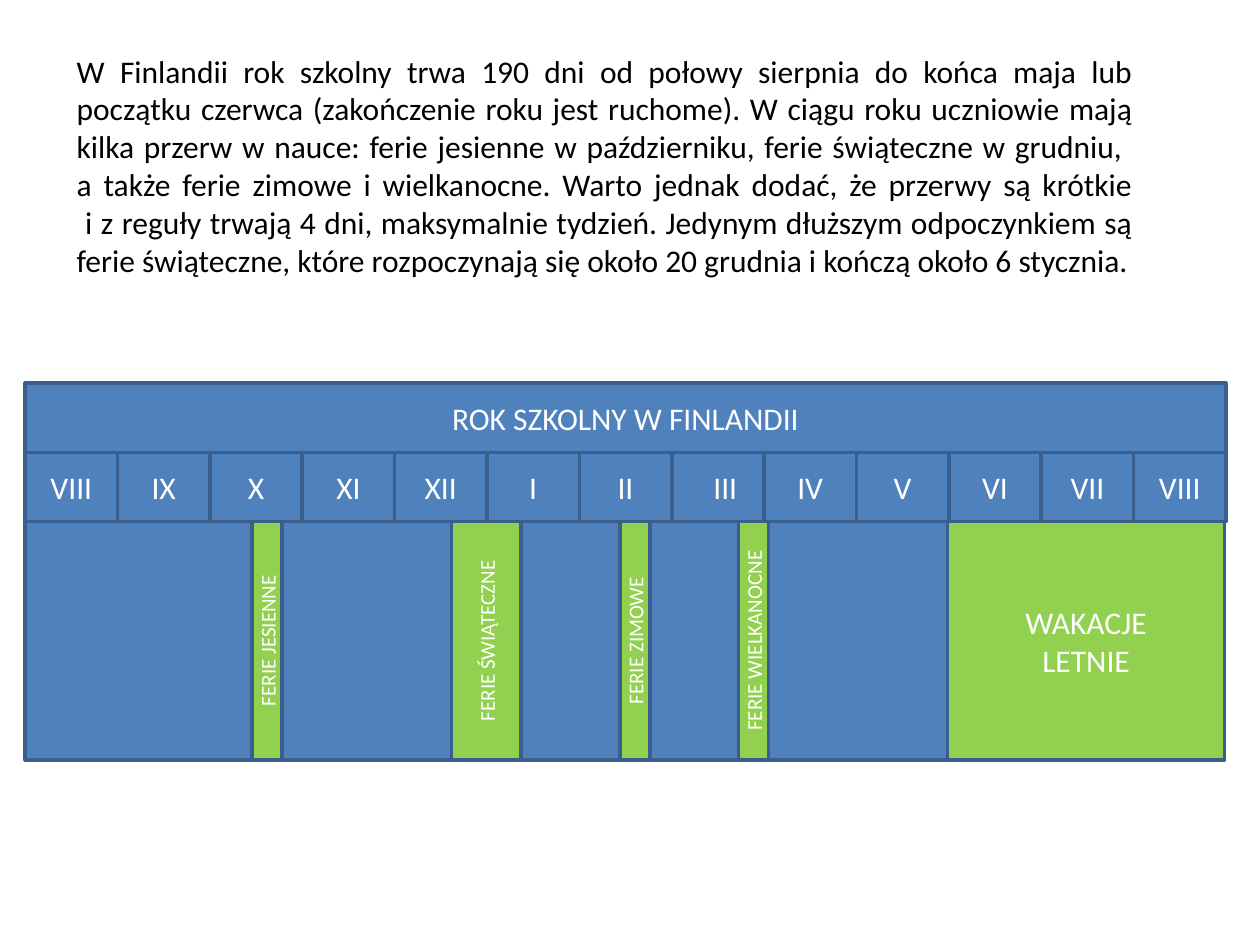
from pptx import Presentation
from pptx.dml.color import RGBColor
from pptx.enum.shapes import MSO_SHAPE as Shape
from pptx.enum.text import MSO_ANCHOR as Anchor, PP_ALIGN as Align
from pptx.util import Inches, Pt

BLUE, GREEN, OUTLINE = "4F81BD", "92D050", "3A5F8C"
BLACK, WHITE = "000000", "FFFFFF"
LEFT, WIDTH = 0.2, 9.53
TITLE_TOP, MONTH_TOP, PERIOD_TOP = 3.04, 3.59, 4.14
ROW_HEIGHT, PERIOD_HEIGHT = 0.55, 1.89

INTRODUCTION = (
    "W Finlandii rok szkolny trwa 190 dni od połowy sierpnia do końca maja lub "
    "początku czerwca (zakończenie roku jest ruchome). W ciągu roku uczniowie mają "
    "kilka przerw w nauce: ferie jesienne w październiku, ferie świąteczne w grudniu, \v"
    "a także ferie zimowe i wielkanocne. Warto jednak dodać, że przerwy są krótkie\v"
    " i z reguły trwają 4 dni, maksymalnie tydzień. Jedynym dłuższym odpoczynkiem są "
    "ferie świąteczne, które rozpoczynają się około 20 grudnia i kończą około 6 stycznia."
)
MONTHS = ["VIII", "IX", "X", "XI", "XII", "I", "II", "III", "IV", "V", "VI", "VII", "VIII"]
WIDER_MONTHS = {"III": 0.85}
BREAKS = [
    ("FERIE WIELKANOCNE", 5.98, 0.24),
    ("FERIE ZIMOWE", 5.04, 0.24),
    ("FERIE JESIENNE", 2.12, 0.24),
    ("FERIE ŚWIĄTECZNE", 3.86, 0.55),
]


def color(value):
    return RGBColor.from_string(value)


def write(shape, text, size, font_color, alignment):
    text_frame = shape.text_frame
    text_frame.word_wrap = True
    text_frame.text = text
    for paragraph in text_frame.paragraphs:
        paragraph.alignment = alignment
        for run in paragraph.runs:
            run.font.name = "Calibri"
            run.font.size = Pt(size)
            run.font.color.rgb = color(font_color)


def add_introduction(slide):
    box = slide.shapes.add_textbox(Inches(0.51), Inches(0.36), Inches(8.58), Inches(2.52))
    write(box, INTRODUCTION, 18, BLACK, Align.JUSTIFY)


def add_block(group, left, top, width, height, fill, text="", size=18):
    block = group.shapes.add_shape(
        Shape.RECTANGLE, Inches(left), Inches(top), Inches(width), Inches(height))
    block.shadow.inherit = False
    block.fill.solid()
    block.fill.fore_color.rgb = color(fill)
    block.line.color.rgb = color(OUTLINE)
    block.line.width = Pt(2)
    block.text_frame.vertical_anchor = Anchor.MIDDLE
    if text:
        write(block, text, size, WHITE, Align.CENTER)
    return block


def add_months(group):
    pitch = WIDTH / len(MONTHS)
    for index, month in enumerate(MONTHS):
        width = WIDER_MONTHS.get(month, pitch)
        add_block(group, LEFT + index * pitch, MONTH_TOP, width, ROW_HEIGHT, BLUE, month)


def add_break(group, name, center, thickness):
    left = center - PERIOD_HEIGHT / 2
    top = PERIOD_TOP + (PERIOD_HEIGHT - thickness) / 2
    block = add_block(group, left, top, PERIOD_HEIGHT, thickness, GREEN, name, 12)
    block.rotation = 270


def add_calendar(slide):
    group = slide.shapes.add_group_shape()
    add_block(group, LEFT, TITLE_TOP, WIDTH, ROW_HEIGHT, BLUE, "ROK SZKOLNY W FINLANDII")
    add_months(group)
    add_block(group, LEFT, PERIOD_TOP, 7.4, PERIOD_HEIGHT, BLUE)
    add_block(group, 7.52, PERIOD_TOP, 2.2, PERIOD_HEIGHT, GREEN, "WAKACJE\nLETNIE")
    for name, center, thickness in BREAKS:
        add_break(group, name, center, thickness)


def main():
    presentation = Presentation()
    presentation.slide_width = Inches(10)
    presentation.slide_height = Inches(7.5)
    slide = presentation.slides.add_slide(presentation.slide_layouts[6])
    add_introduction(slide)
    add_calendar(slide)
    presentation.save("out.pptx")


if __name__ == "__main__":
    main()
